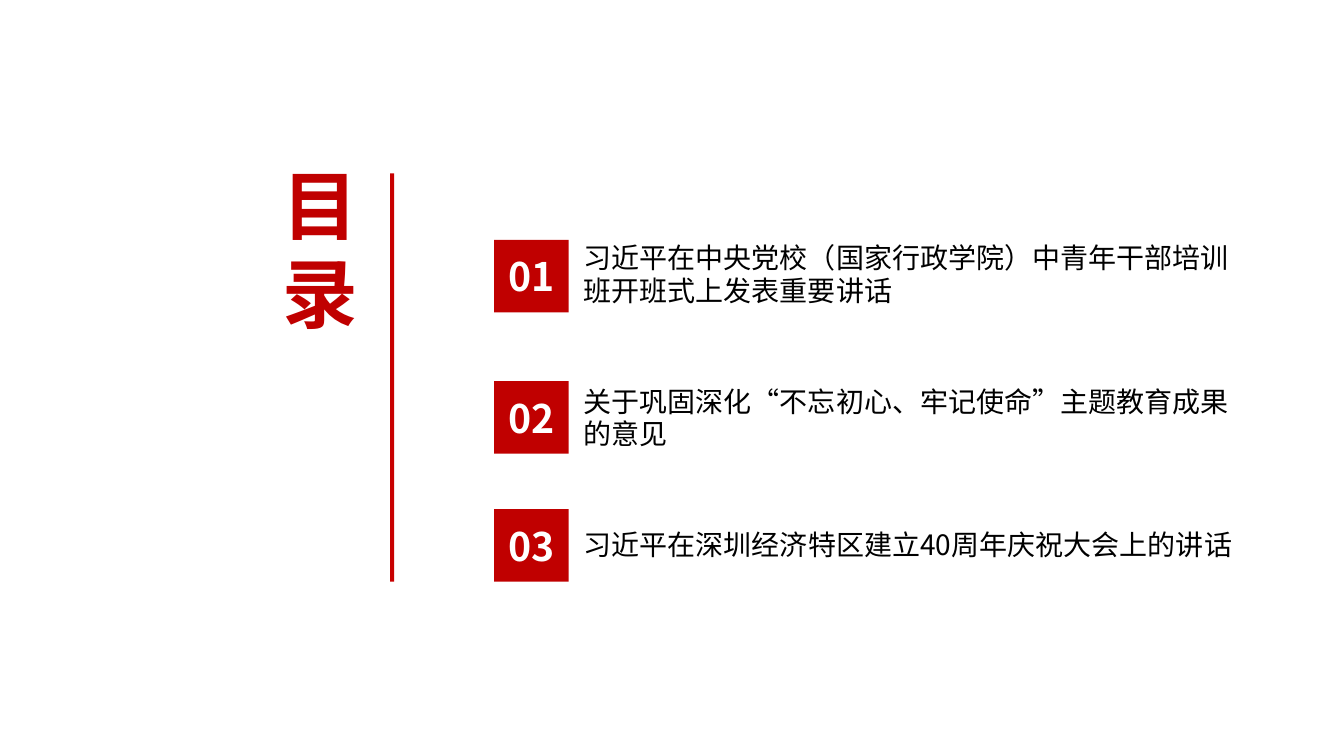
from dataclasses import dataclass

import pptx
import pptx.dml.color
import pptx.enum.shapes
import pptx.enum.text
import pptx.oxml
import pptx.oxml.ns
import pptx.presentation
import pptx.shapes.autoshape
import pptx.slide
import pptx.text.text
import pptx.util

Inches = pptx.util.Inches
RGB = pptx.dml.color.RGBColor


@dataclass(frozen=True)
class Theme:
    font: str = "Noto Sans CJK SC"
    red: RGB = RGB(0xC0, 0x00, 0x00)
    rule_red: RGB = RGB(0xC8, 0x00, 0x00)
    black: RGB = RGB(0x00, 0x00, 0x00)
    white: RGB = RGB(0xFF, 0xFF, 0xFF)
    heading_size: int = 54
    number_size: int = 28
    topic_size: int = 20
    line_pitch: float = 1.17


@dataclass(frozen=True)
class Box:
    left: float
    top: float
    width: float
    height: float

    def lengths(self) -> tuple[int, int, int, int]:
        return (Inches(self.left), Inches(self.top),
                Inches(self.width), Inches(self.height))


@dataclass(frozen=True)
class Chapter:
    topic: str
    number_top: float
    topic_box: Box


THEME = Theme()
CHAPTERS = [
    Chapter("习近平在中央党校（国家行政学院）中青年干部培训班开班式上发表重要讲话",
            2.38, Box(5.69, 2.35, 6.6, 0.77)),
    Chapter("关于巩固深化“不忘初心、牢记使命”主题教育成果的意见",
            3.78, Box(5.69, 3.77, 6.6, 0.77)),
    Chapter("习近平在深圳经济特区建立40周年庆祝大会上的讲话",
            5.05, Box(5.69, 5.19, 6.72, 0.44)),
]


def write(frame: pptx.text.text.TextFrame, text: str, size: int,
          color: RGB, bold: bool = False) -> None:
    frame.word_wrap = True
    frame.text = text
    for run in frame.paragraphs[0].runs:
        run.font.name = THEME.font
        run.font.size = pptx.util.Pt(size)
        run.font.bold = bold
        run.font.color.rgb = color
        east_asian = pptx.oxml.parse_xml(
            f'<a:ea {pptx.oxml.ns.nsdecls("a")} typeface="{THEME.font}"/>')
        run.font._element.find(pptx.oxml.ns.qn("a:latin")).addnext(east_asian)


def add_text(slide: pptx.slide.Slide, box: Box, text: str, size: int,
             color: RGB, bold: bool = False) -> pptx.text.text.TextFrame:
    frame = slide.shapes.add_textbox(*box.lengths()).text_frame
    write(frame, text, size, color, bold)
    frame.paragraphs[0].line_spacing = pptx.util.Pt(size * THEME.line_pitch)
    return frame


def add_block(slide: pptx.slide.Slide, box: Box,
              color: RGB) -> pptx.shapes.autoshape.Shape:
    block = slide.shapes.add_shape(
        pptx.enum.shapes.MSO_SHAPE.RECTANGLE, *box.lengths())
    block.shadow.inherit = False
    block.fill.solid()
    block.fill.fore_color.rgb = color
    block.line.fill.background()
    return block


def add_heading(slide: pptx.slide.Slide) -> None:
    heading = add_text(slide, Box(2.73, 1.56, 1.2, 1.89), "目录",
                       THEME.heading_size, THEME.red, bold=True)
    heading.margin_left = heading.margin_right = Inches(0.07)
    heading.margin_top = heading.margin_bottom = Inches(0.04)


def add_chapter(slide: pptx.slide.Slide, number: int, chapter: Chapter) -> None:
    add_text(slide, chapter.topic_box, chapter.topic,
             THEME.topic_size, THEME.black)
    badge = add_block(slide, Box(4.9, chapter.number_top, 0.74, 0.72), THEME.red)
    write(badge.text_frame, f"{number:02d}", THEME.number_size,
          THEME.white, bold=True)
    badge.text_frame.vertical_anchor = pptx.enum.text.MSO_ANCHOR.MIDDLE
    badge.text_frame.paragraphs[0].alignment = pptx.enum.text.PP_ALIGN.CENTER


def main() -> None:
    deck: pptx.presentation.Presentation = pptx.Presentation()
    deck.slide_width = Inches(13.33)
    deck.slide_height = Inches(7.5)
    slide = deck.slides.add_slide(deck.slide_layouts[6])
    add_heading(slide)
    add_block(slide, Box(3.87, 1.72, 0.04, 4.05), THEME.rule_red)
    for number, chapter in enumerate(CHAPTERS, start=1):
        add_chapter(slide, number, chapter)
    deck.save("out.pptx")


if __name__ == "__main__":
    main()
